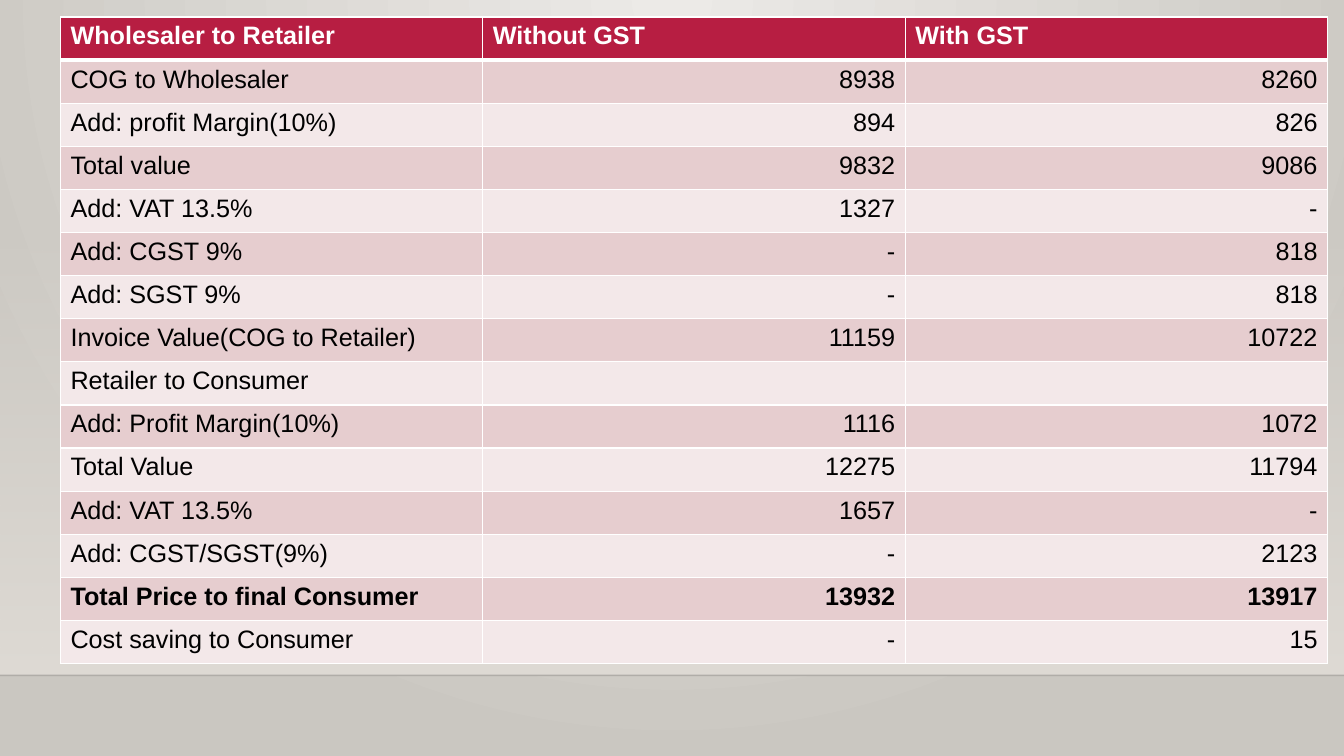
from pptx import Presentation
from pptx.dml.color import RGBColor
from pptx.enum.shapes import MSO_CONNECTOR, MSO_SHAPE
from pptx.enum.text import PP_ALIGN
from pptx.oxml import parse_xml
from pptx.oxml.ns import nsdecls, qn
from pptx.util import Pt

RECTANGLE = MSO_SHAPE.RECTANGLE
STRAIGHT = MSO_CONNECTOR.STRAIGHT
LEFT, RIGHT = PP_ALIGN.LEFT, PP_ALIGN.RIGHT

WHITE = RGBColor(0xFF, 0xFF, 0xFF)
BLACK = RGBColor(0x00, 0x00, 0x00)
CRIMSON = RGBColor(0xB7, 0x1E, 0x42)
ROSE = RGBColor(0xE6, 0xCD, 0xCF)
PALE_ROSE = RGBColor(0xF3, 0xE8, 0xE9)
LIGHT_STONE = RGBColor(0xEC, 0xEA, 0xE7)
DARK_STONE = RGBColor(0xCA, 0xC7, 0xC1)
SAND = RGBColor(0xDF, 0xDB, 0xD5)

WIDTH, HEIGHT = 960, 540
FLOOR = 482.4
BAND_TOP = 159

PRICE_ROWS = [
    ("Wholesaler to Retailer", "Without GST", "With GST"),
    ("COG to Wholesaler", "8938", "8260"),
    ("Add: profit Margin(10%)", "894", "826"),
    ("Total value", "9832", "9086"),
    ("Add: VAT 13.5%", "1327", "-"),
    ("Add: CGST 9%", "-", "818"),
    ("Add: SGST 9%", "-", "818"),
    ("Invoice Value(COG to Retailer)", "11159", "10722"),
    ("Retailer to Consumer", "", ""),
    ("Add: Profit Margin(10%)", "1116", "1072"),
    ("Total Value", "12275", "11794"),
    ("Add: VAT 13.5%", "1657", "-"),
    ("Add: CGST/SGST(9%)", "-", "2123"),
    ("Total Price to final Consumer", "13932", "13917"),
    ("Cost saving to Consumer", "-", "15"),
]
FINAL_PRICE_ROW = 13


def gradient(start, end, direction, start_alpha=100):
    return parse_xml(
        f'<a:gradFill {nsdecls("a")} rotWithShape="1"><a:gsLst>'
        f'<a:gs pos="0"><a:srgbClr val="{start}"><a:alpha val="{start_alpha * 1000}"/></a:srgbClr></a:gs>'
        f'<a:gs pos="100000"><a:srgbClr val="{end}"/></a:gs>'
        f'</a:gsLst>{direction}</a:gradFill>'
    )


class SlideBuilder:
    font_name = "Arial"
    font_size = 18

    def __init__(self, page):
        self.page = page

    def background(self, center, edge):
        self.page.background.fill.solid()
        properties = self.page.element.find(".//" + qn("p:bgPr"))
        direction = ('<a:path path="circle"><a:fillToRect l="43000" t="0" '
                     'r="43000" b="100000"/></a:path>')
        properties.replace(properties[0], gradient(center, edge, direction))

    def fading_band(self, left, top, width, height, color):
        band = self.page.shapes.add_shape(RECTANGLE, Pt(left), Pt(top), Pt(width), Pt(height))
        band.shadow.inherit = False
        band.line.fill.background()
        band.fill.solid()
        properties = band.element.spPr
        fade = gradient(color, color, '<a:lin ang="5400000" scaled="0"/>', 0)
        properties.replace(properties.find(qn("a:solidFill")), fade)

    def rule(self, left, right, top, color, opacity):
        line = self.page.shapes.add_connector(STRAIGHT, Pt(left), Pt(top), Pt(right), Pt(top))
        line.line.width = Pt(1)
        line.line.color.rgb = color
        properties = line.element.spPr
        properties.append(parse_xml(f'<a:effectLst {nsdecls("a")}/>'))
        color_element = properties.find(".//" + qn("a:srgbClr"))
        color_element.append(parse_xml(f'<a:alpha {nsdecls("a")} val="{opacity * 1000}"/>'))

    def table(self, left, top, column_width, row_height, rows, bold_rows):
        columns = len(rows[0])
        frame = self.page.shapes.add_table(
            len(rows), columns, Pt(left), Pt(top),
            Pt(column_width * columns), Pt(row_height * len(rows)))
        grid = frame.table
        for column in grid.columns:
            column.width = Pt(column_width)
        for row_index, texts in enumerate(rows):
            grid.rows[row_index].height = Pt(row_height)
            header = row_index == 0
            fill = CRIMSON if header else ROSE if row_index % 2 else PALE_ROSE
            for column_index, text in enumerate(texts):
                cell = grid.cell(row_index, column_index)
                self.borders(cell, 3 if row_index == 1 else 1, 3 if header else 1)
                cell.fill.solid()
                cell.fill.fore_color.rgb = fill
                cell.text = text
                para = cell.text_frame.paragraphs[0]
                para.alignment = LEFT if header or column_index == 0 else RIGHT
                para.font.name = self.font_name
                para.font.size = Pt(self.font_size)
                para.font.bold = row_index in bold_rows
                para.font.color.rgb = WHITE if header else BLACK

    def borders(self, cell, top, bottom):
        properties = cell._tc.get_or_add_tcPr()
        for side, width in (("L", 1), ("R", 1), ("T", top), ("B", bottom)):
            properties.append(parse_xml(
                f'<a:ln{side} {nsdecls("a")} w="{Pt(width)}"><a:solidFill>'
                f'<a:srgbClr val="{WHITE}"/></a:solidFill></a:ln{side}>'))


def main():
    deck = Presentation()
    deck.slide_width, deck.slide_height = Pt(WIDTH), Pt(HEIGHT)
    builder = SlideBuilder(deck.slides.add_slide(deck.slide_layouts[6]))
    builder.background(LIGHT_STONE, DARK_STONE)
    builder.fading_band(0, BAND_TOP, WIDTH, FLOOR - BAND_TOP, SAND)
    builder.rule(0, WIDTH, FLOOR, BLACK, 20)
    builder.table(43.2, 12.2, 301.7, 30.8, PRICE_ROWS, (0, FINAL_PRICE_ROW))
    deck.save("out.pptx")


if __name__ == "__main__":
    main()
